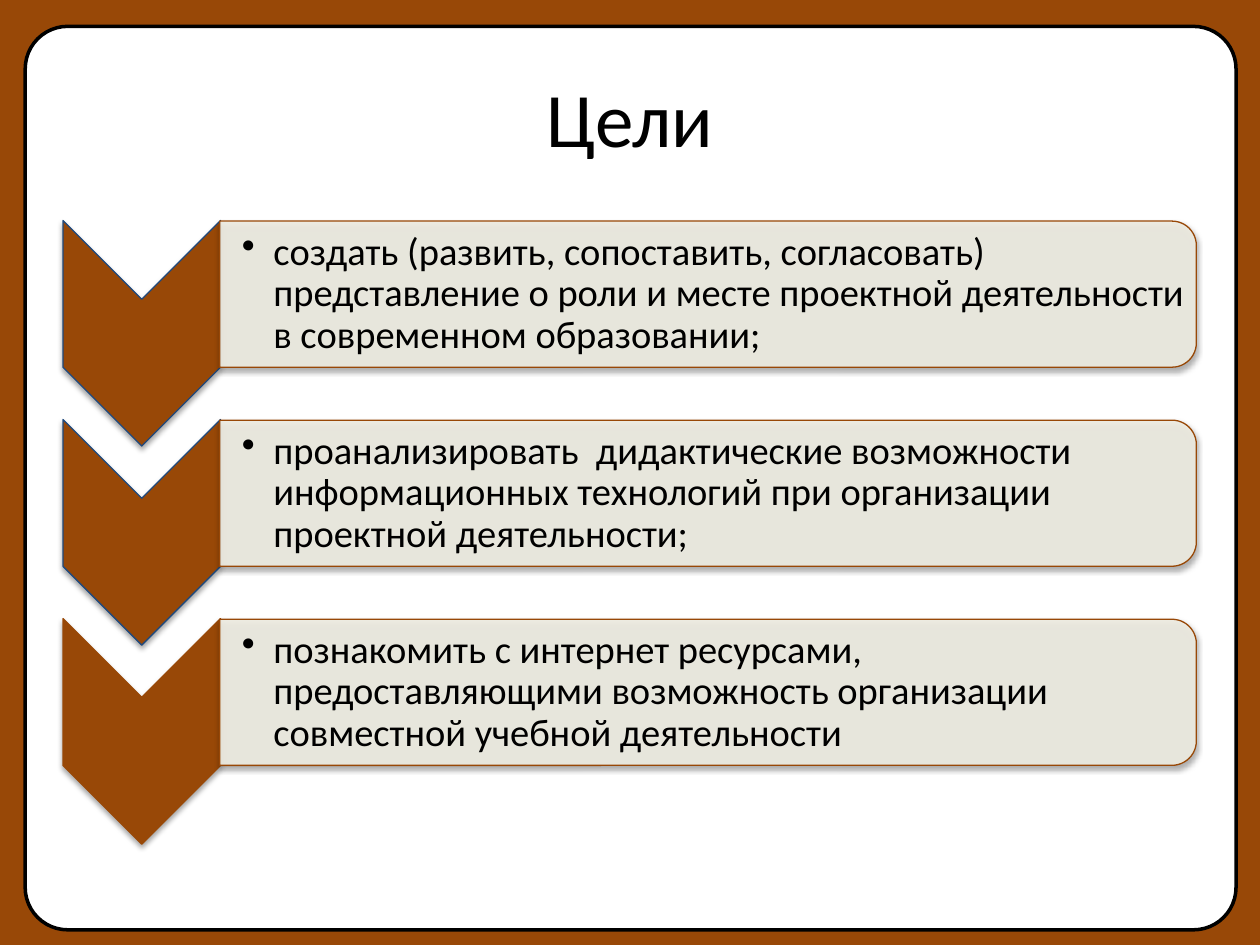
"""Build the goals slide: three chevrons, each paired with a bulleted panel."""
from dataclasses import dataclass

import lxml.etree
import pptx
import pptx.dml.color
import pptx.enum.shapes
import pptx.enum.text
import pptx.oxml.ns
import pptx.util

Pt = pptx.util.Pt
RGBColor = pptx.dml.color.RGBColor
ShapeType = pptx.enum.shapes.MSO_SHAPE
qn = pptx.oxml.ns.qn

BROWN = RGBColor(0x98, 0x48, 0x07)
NAVY = RGBColor(0x1F, 0x49, 0x7D)
CREAM = RGBColor(0xEE, 0xEC, 0xE1)
WHITE = RGBColor(0xFF, 0xFF, 0xFF)
BLACK = RGBColor(0, 0, 0)
ROW_STEP = 113.76


@dataclass(frozen=True)
class Box:
    left: float
    top: float
    width: float
    height: float

    def lowered(self, offset: float) -> "Box":
        return Box(self.left, self.top + offset, self.width, self.height)

    def lengths(self) -> list:
        return [Pt(value) for value in (self.left, self.top, self.width, self.height)]


@dataclass(frozen=True)
class Goal:
    text: str
    chevron_line: RGBColor


FRAME = Box(14.4, 15.12, 691.92, 516.24)
TITLE = Box(36, 21.6, 648, 90)
CHEVRON = Box(16.56, 145.44, 128.88, 90)
PANEL = Box(362.88, -110.88, 83.52, 558)
PANEL_TEXT = Box(126, 130.32, 553.68, 75.6)

GOALS = [
    Goal("создать (развить, сопоставить, согласовать) представление о роли и месте "
         "проектной деятельности в современном образовании;", NAVY),
    Goal("проанализировать  дидактические возможности информационных технологий "
         "при организации проектной деятельности;", NAVY),
    Goal("познакомить с интернет ресурсами, предоставляющими возможность "
         "организации совместной учебной деятельности", BROWN),
]

FRAME_FORMAT = {
    "word_wrap": True,
    "vertical_anchor": pptx.enum.text.MSO_ANCHOR.MIDDLE,
}
PANEL_FORMAT = {
    "margin_left": Pt(12.24),
    "margin_top": Pt(1.44),
    "margin_right": Pt(1.44),
    "margin_bottom": Pt(1.44),
}


def apply_format(target, values: dict) -> None:
    """Set every named attribute on the target."""
    for name, value in values.items():
        setattr(target, name, value)


def add_figure(slide, kind, box: Box, fill: RGBColor, line: RGBColor, weight: float):
    """Add a filled and outlined shape without a shadow."""
    shape = slide.shapes.add_shape(kind, *box.lengths())
    shape.fill.solid()
    shape.fill.fore_color.rgb = fill
    shape.line.color.rgb = line
    shape.line.width = Pt(weight)
    shape.shadow.inherit = False
    return shape


def add_rotated_figure(slide, kind, box: Box, fill: RGBColor, line: RGBColor):
    """Add a shape turned a quarter, with a soft shadow below it."""
    shape = add_figure(slide, kind, box, fill, line, 0.75)
    shape.rotation = 90
    effects = shape.element.spPr.find(qn("a:effectLst"))
    shadow = lxml.etree.SubElement(
        effects, qn("a:outerShdw"), blurRad=str(Pt(3.1)), dist=str(Pt(1.8)),
        dir="5400000", rotWithShape="0")
    color = lxml.etree.SubElement(shadow, qn("a:srgbClr"), val=str(BLACK))
    lxml.etree.SubElement(color, qn("a:alpha"), val="35000")
    return shape


def add_text(slide, box: Box, text: str, size: float, frame_format: dict):
    """Add a wrapped text box and return its paragraph."""
    frame = slide.shapes.add_textbox(*box.lengths()).text_frame
    apply_format(frame, FRAME_FORMAT | frame_format)
    paragraph = frame.paragraphs[0]
    run = paragraph.add_run()
    run.text = text
    apply_format(run.font, {"name": "Calibri", "size": Pt(size)})
    run.font.color.rgb = BLACK
    return paragraph


def add_goal(slide, goal: Goal, offset: float) -> None:
    """Draw one row: chevron, panel and bulleted text."""
    add_rotated_figure(slide, ShapeType.CHEVRON, CHEVRON.lowered(offset),
                       BROWN, goal.chevron_line)
    panel = add_rotated_figure(slide, ShapeType.ROUND_2_SAME_RECTANGLE,
                               PANEL.lowered(offset), CREAM, BROWN)
    panel_color = panel.element.spPr.find(qn("a:solidFill")).find(qn("a:srgbClr"))
    lxml.etree.SubElement(panel_color, qn("a:alpha"), val="90000")

    paragraph = add_text(slide, PANEL_TEXT.lowered(offset), goal.text, 22, PANEL_FORMAT)
    paragraph.line_spacing = 0.9
    properties = paragraph._p.get_or_add_pPr()
    properties.set("marL", str(Pt(18)))
    properties.set("indent", str(-Pt(18)))
    lxml.etree.SubElement(properties, qn("a:buChar"), char="•")


def main() -> None:
    """Create the presentation and save it."""
    presentation = pptx.Presentation()
    apply_format(presentation, {"slide_width": Pt(720), "slide_height": Pt(540)})
    slide = presentation.slides.add_slide(presentation.slide_layouts[6])
    slide.background.fill.solid()
    slide.background.fill.fore_color.rgb = BROWN

    frame = add_figure(slide, ShapeType.ROUNDED_RECTANGLE, FRAME, WHITE, BLACK, 2)
    frame.adjustments[0] = 0.047
    title = add_text(slide, TITLE, "Цели", 44, {})
    title.alignment = pptx.enum.text.PP_ALIGN.CENTER
    for index, goal in enumerate(GOALS):
        add_goal(slide, goal, index * ROW_STEP)
    presentation.save("out.pptx")


if __name__ == "__main__":
    main()
